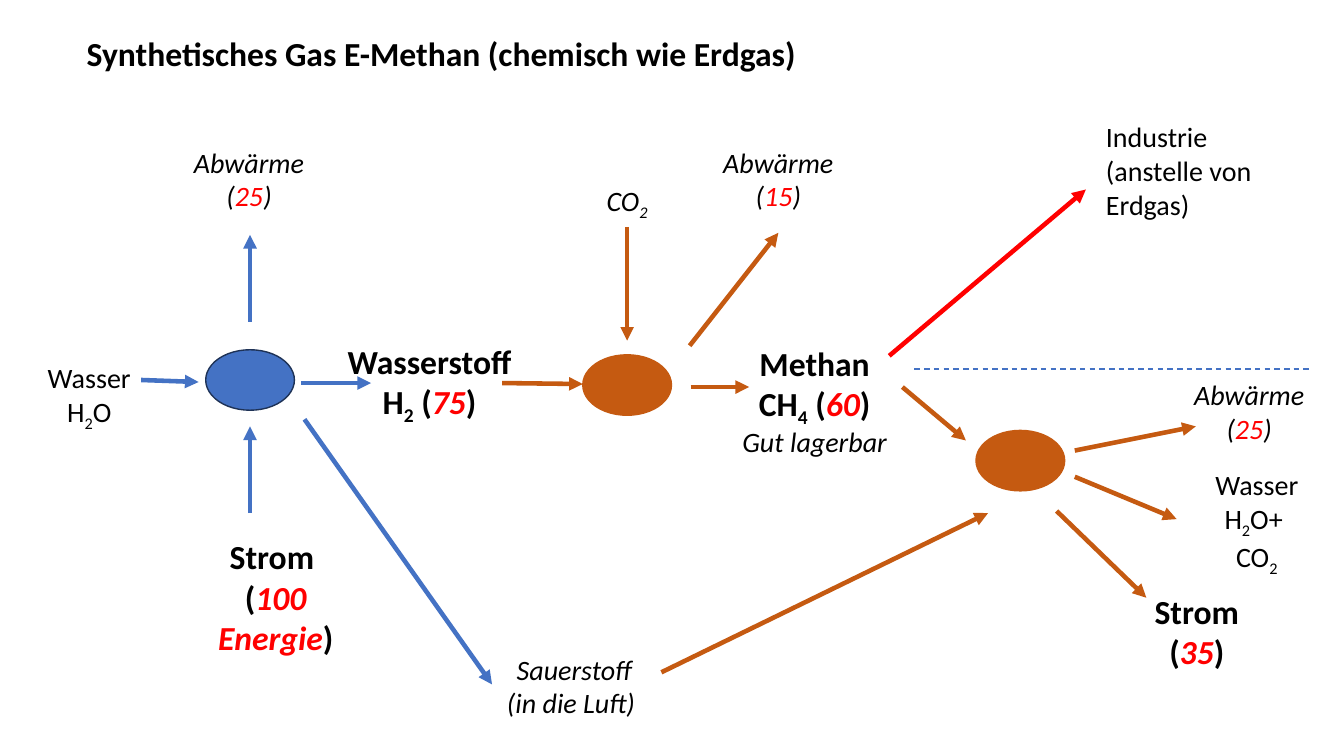
from lxml import etree
from pptx import Presentation
from pptx.dml.color import RGBColor
from pptx.enum.dml import MSO_LINE
from pptx.enum.shapes import MSO_CONNECTOR, MSO_SHAPE
from pptx.enum.text import MSO_ANCHOR, MSO_AUTO_SIZE, PP_ALIGN
from pptx.oxml.ns import qn
from pptx.util import Pt

BLUE = RGBColor(0x44, 0x72, 0xC4)
NAVY = RGBColor(0x1E, 0x32, 0x56)
ORANGE = RGBColor(0xC5, 0x5A, 0x11)
RED = RGBColor(0xFF, 0x00, 0x00)
BLACK = RGBColor(0x00, 0x00, 0x00)
STRAIGHT = MSO_CONNECTOR.STRAIGHT
ELLIPSE = MSO_SHAPE.OVAL
DASH = MSO_LINE.DASH
TOP = MSO_ANCHOR.TOP
NO_FIT = MSO_AUTO_SIZE.NONE
LEFT, CENTER = PP_ALIGN.LEFT, PP_ALIGN.CENTER

PX = 9144
FONT = "Calibri"
SMALL, LARGE = 20, 24

TITLE = "Synthetisches Gas E-Methan (chemisch wie Erdgas)"
TITLE_BOX = (76, 28, 1158, 50)


def waste_heat(value):
    return [[("Abwärme (", "i"), (value, "ir"), (")", "i")]]


# Run styles: b bold, i italic, r red, s subscript
LABELS = [
    ((9, 353, 159, 77), SMALL, CENTER,
     [[("Wasser", "")], [("H", ""), ("2", "s"), ("O", "")]]),
    ((187, 527, 173, 131), LARGE, CENTER,
     [[("Strom ", "b")], [("(", "b"), ("100 Energie", "bir"), (")", "b")]]),
    ((180, 139, 134, 77), SMALL, CENTER, waste_heat("25")),
    ((334, 333, 184, 91), LARGE, CENTER,
     [[("Wasserstoff", "b")],
      [("H", "b"), ("2", "bs"), (" (", "b"), ("75", "bir"), (")", "b")]]),
    ((462, 642, 215, 77), SMALL, CENTER,
     [[("Sauerstoff", "i")], [("(in die Luft) ", "i")]]),
    ((555, 177, 134, 44), SMALL, CENTER, [[("CO", "i"), ("2", "is")]]),
    ((705, 139, 134, 77), SMALL, CENTER, waste_heat("15")),
    ((716, 335, 184, 84), LARGE, CENTER,
     [[("Methan CH", "b"), ("4", "bs"), (" (", "b"), ("60", "bir"), (")", "b")]]),
    ((716, 416, 184, 44), SMALL, CENTER, [[("Gut lagerbar", "i")]]),
    ((1087, 114, 195, 111), SMALL, LEFT,
     [[("Industrie", "")], [("(anstelle von Erdgas)", "")]]),
    ((1172, 370, 134, 77), SMALL, CENTER, waste_heat("25")),
    ((1167, 459, 159, 111), SMALL, CENTER,
     [[("Wasser H", ""), ("2", "s"), ("O+ ", "")], [("CO", ""), ("2", "s")]]),
    ((1120, 581, 134, 91), LARGE, CENTER,
     [[("Strom (", "b"), ("35", "bir"), (")", "b")]]),
]

NODE_SIZE = (88, 60)
NODES = [
    ((204, 347), BLUE, NAVY),
    ((578, 352), ORANGE, ORANGE),
    ((968, 427), ORANGE, ORANGE),
]

ARROWS = {
    BLUE: [
        (140, 377, 197, 379),
        (248, 509, 248, 423),
        (248, 319, 248, 233),
        (302, 416, 488, 679),
        (299, 380, 368, 380),
    ],
    ORANGE: [
        (498, 380, 578, 381),
        (622, 225, 622, 338),
        (684, 343, 772, 231),
        (685, 384, 743, 384),
        (895, 384, 958, 437),
        (656, 667, 980, 509),
        (1066, 447, 1186, 423),
        (1066, 473, 1167, 515),
        (1048, 507, 1137, 593),
    ],
    RED: [(882, 353, 1077, 188)],
}
DIVIDER = (907, 366, 1302, 366)


def emu(values):
    return [v * PX for v in values]


def format_run(r, size, style):
    f = r.font
    f.name, f.size = FONT, Pt(size)
    f.bold, f.italic = "b" in style, "i" in style
    f.color.rgb = RED if "r" in style else BLACK
    if "s" in style:
        r._r.get_or_add_rPr().set("baseline", "-25000")


def add_label(slide, box, size, align, paragraphs):
    tf = slide.shapes.add_textbox(*emu(box)).text_frame
    tf.word_wrap = True
    for i, runs in enumerate(paragraphs):
        p = tf.add_paragraph() if i else tf.paragraphs[0]
        p.alignment = align
        for text, style in runs:
            r = p.add_run()
            r.text = text
            format_run(r, size, style)


def add_line(slide, ends, color, width):
    c = slide.shapes.add_connector(STRAIGHT, *emu(ends))
    c.line.color.rgb = color
    c.line.width = Pt(width)
    etree.SubElement(c._element.spPr, qn("a:effectLst"))
    return c


def main():
    prs = Presentation()
    prs.slide_width, prs.slide_height = emu((1333, 750))
    slide = prs.slides.add_slide(prs.slide_layouts[5])

    title = slide.shapes.title
    title.left, title.top, title.width, title.height = emu(TITLE_BOX)
    tf = title.text_frame
    tf.text = TITLE
    tf.word_wrap, tf.auto_size, tf.vertical_anchor = True, NO_FIT, TOP
    p = tf.paragraphs[0]
    p.alignment = LEFT
    format_run(p.runs[0], LARGE, "b")

    for label in LABELS:
        add_label(slide, *label)

    for corner, fill, outline in NODES:
        sp = slide.shapes.add_shape(ELLIPSE, *emu(corner + NODE_SIZE))
        sp.shadow.inherit = False
        sp.fill.solid()
        sp.fill.fore_color.rgb = fill
        sp.line.color.rgb = outline
        sp.line.width = Pt(1)

    for color, arrows in ARROWS.items():
        for ends in arrows:
            c = add_line(slide, ends, color, 3.25)
            etree.SubElement(c.line._get_or_add_ln(), qn("a:tailEnd"), type="triangle")

    add_line(slide, DIVIDER, BLUE, 1).line.dash_style = DASH
    prs.save("out.pptx")


if __name__ == "__main__":
    main()
